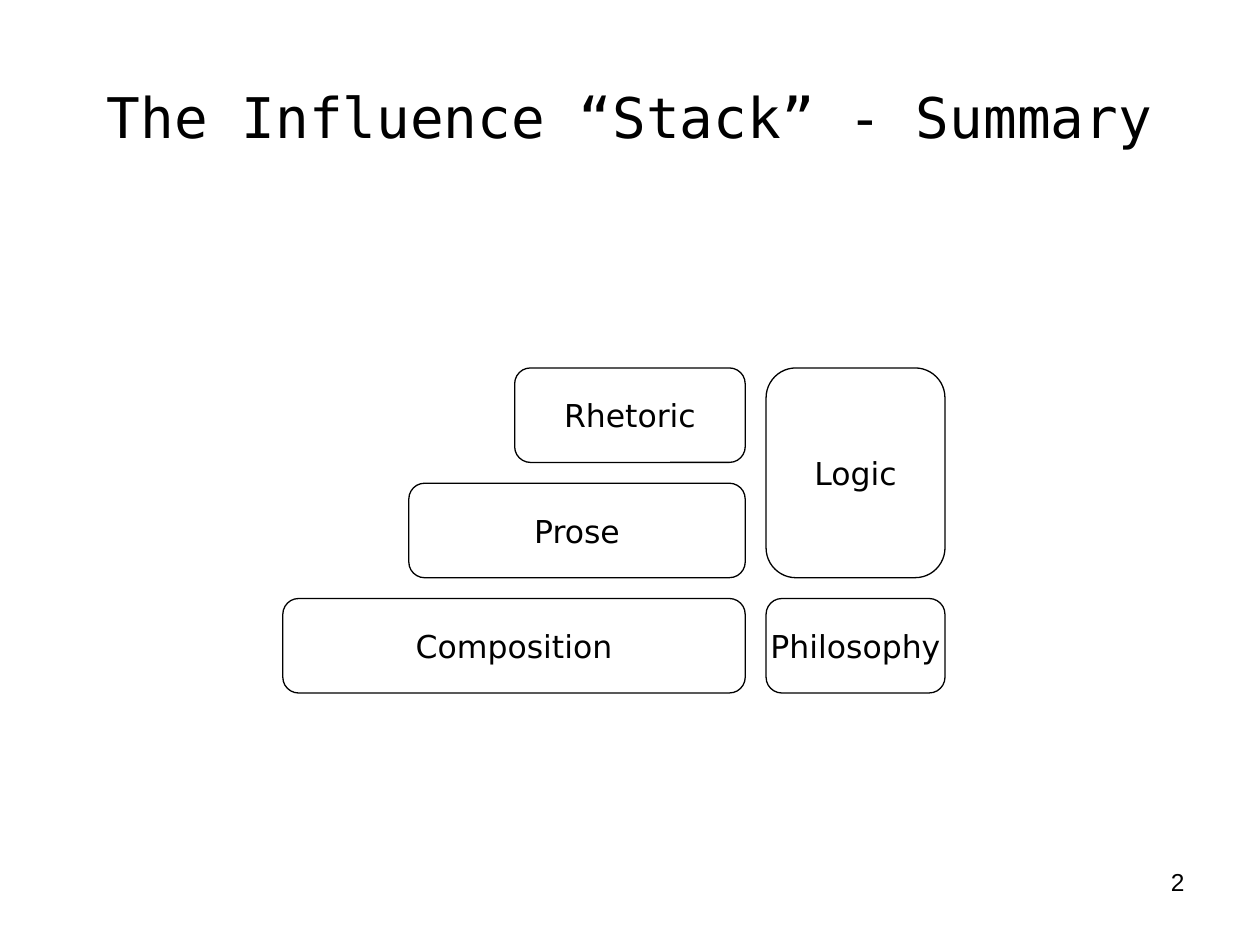
from pptx import Presentation
from pptx.dml.color import RGBColor
from pptx.enum.shapes import MSO_SHAPE
from pptx.enum.text import MSO_ANCHOR, PP_ALIGN
from pptx.util import Inches, Pt

BLACK = RGBColor(0, 0, 0)
TITLE_ONLY = 5
ROW_HEIGHT = Inches(0.75)
SIDE_WIDTH = Inches(1.42)


def write(shape, text, size=18, font="DejaVu Sans", align=PP_ALIGN.CENTER,
          anchor=MSO_ANCHOR.MIDDLE, wrap=True):
    frame = shape.text_frame
    frame.word_wrap = wrap
    frame.vertical_anchor = anchor
    para = frame.paragraphs[0]
    para.alignment = align
    span = para.add_run()
    span.text = text
    span.font.size = Pt(size)
    span.font.name = font
    span.font.color.rgb = BLACK


def add_title(page, left, top, width, height):
    title = page.shapes.title
    title.left, title.top, title.width, title.height = left, top, width, height
    write(title, "The Influence “Stack” - Summary", size=32, font="DejaVu Sans Mono")


def add_block(page, text, left, top, width, height):
    block = page.shapes.add_shape(MSO_SHAPE.ROUNDED_RECTANGLE, left, top, width, height)
    block.adjustments[0] = 0.167
    block.shadow.inherit = False
    block.fill.background()
    block.line.color.rgb = BLACK
    block.line.width = Pt(0.75)
    write(block, text, wrap=False)


def add_stack(page, left, top, width, height):
    """Three right-aligned steps, with a column of two blocks beside them."""
    gap = (height - 3 * ROW_HEIGHT) // 2
    pitch = ROW_HEIGHT + gap
    side_left = left + width - SIDE_WIDTH
    steps_right = side_left - gap

    steps = [("Rhetoric", 1.83), ("Prose", 2.67), ("Composition", 3.67)]
    for row, (text, inches) in reversed(list(enumerate(steps))):
        step_width = Inches(inches)
        add_block(page, text, steps_right - step_width, top + row * pitch,
                  step_width, ROW_HEIGHT)

    add_block(page, "Logic", side_left, top, SIDE_WIDTH, pitch + ROW_HEIGHT)
    add_block(page, "Philosophy", side_left, top + 2 * pitch, SIDE_WIDTH, ROW_HEIGHT)


def add_page_number(page, left, top, width, height):
    box = page.shapes.add_textbox(left, top, width, height)
    write(box, "2", size=14, font="Arial", align=PP_ALIGN.RIGHT, anchor=MSO_ANCHOR.TOP)


def main():
    deck = Presentation()
    deck.slide_width, deck.slide_height = Inches(10), Inches(7.5)
    page = deck.slides.add_slide(deck.slide_layouts[TITLE_ONLY])
    add_page_number(page, Inches(7.17), Inches(6.83), Inches(2.33), Inches(0.52))
    add_title(page, Inches(0.5), Inches(0.3), Inches(9), Inches(1.25))
    add_stack(page, Inches(2.25), Inches(2.92), Inches(5.25), Inches(2.58))
    deck.save("out.pptx")


if __name__ == "__main__":
    main()
